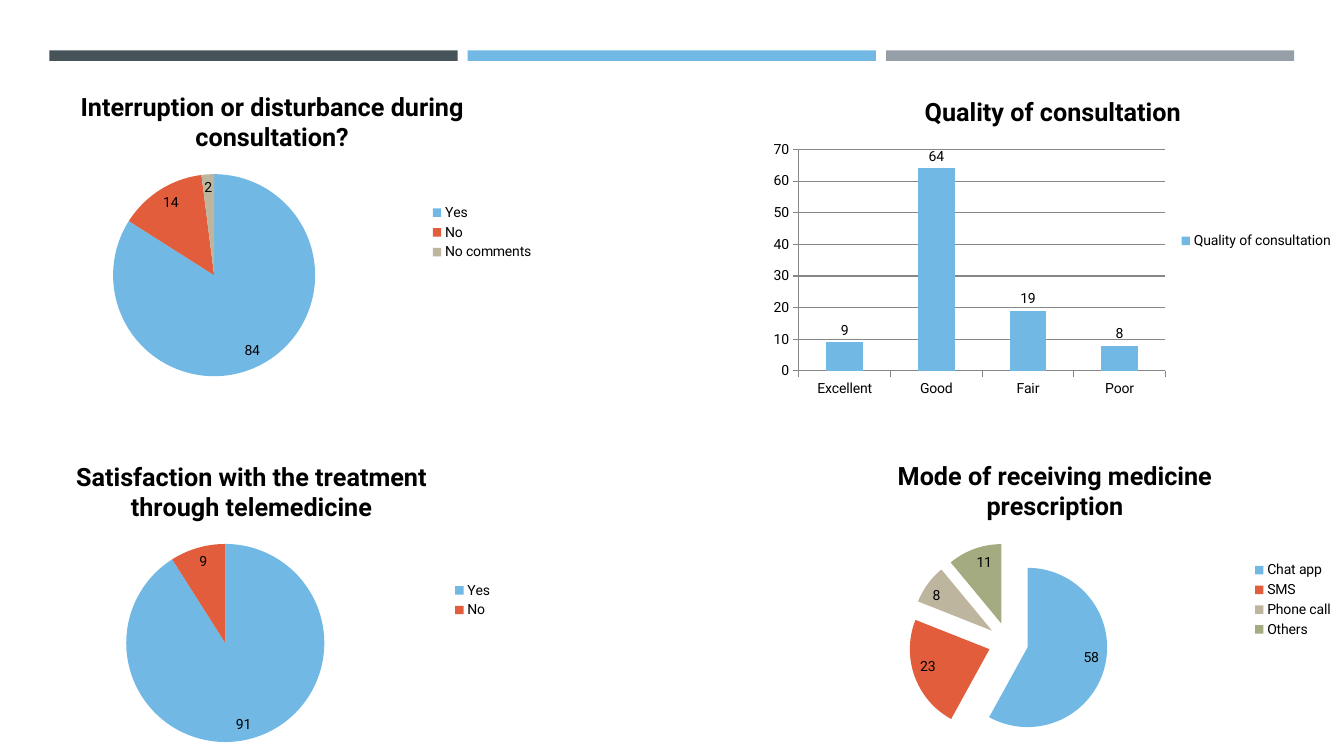
import pptx
import pptx.chart.data
import pptx.dml.color
import pptx.enum.chart
import pptx.enum.shapes
import pptx.util
from lxml import etree

Pt = pptx.util.Pt
Kind = pptx.enum.chart.XL_CHART_TYPE
LabelPosition = pptx.enum.chart.XL_LABEL_POSITION

FONT = "Roboto"
COLOURS = {
    "slate": "465359", "blue": "71B9E4", "grey": "969FA7",
    "red": "E25D3C", "sand": "BDB59D", "green": "A5AB81",
    "text": "000000", "axis": "868686",
}
SLICE_COLOURS = ["blue", "red", "sand", "green"]
BAR_COLOURS = ["slate", "blue", "grey"]
BAR_LEFT, BAR_TOP, BAR_WIDTH, BAR_HEIGHT, BAR_STEP = 35.3, 36, 291.6, 7.5, 298.8

# Boxes are left, top, width, height in points.
CHARTS = [
    {"title": "Interruption or disturbance during consultation?",
     "kind": Kind.PIE, "box": (0, 53.3, 388.8, 225.4),
     "values": {"Yes": 84, "No": 14, "No comments": 2}},
    {"title": "Quality of consultation",
     "kind": Kind.COLUMN_CLUSTERED, "box": (544.3, 56.2, 415.4, 231.8),
     "values": {"Excellent": 9, "Good": 64, "Fair": 19, "Poor": 8}},
    {"title": "Satisfaction with the treatment through telemedicine",
     "series": "Series 1",
     "kind": Kind.PIE, "box": (0, 317.5, 359.3, 222.5),
     "values": {"Yes": 91, "No": 9}},
    {"title": "Mode of receiving medicine prescription",
     "kind": Kind.PIE, "box": (547.2, 316.8, 412.6, 223.2), "explosion": 25,
     "values": {"Chat app": 58, "SMS": 23, "Phone call": 8, "Others": 11}},
]


def rgb(name):
    return pptx.dml.color.RGBColor.from_string(COLOURS[name])


def paint(fill, name):
    fill.solid()
    fill.fore_color.rgb = rgb(name)


def style_font(font, size, bold=False):
    font.name = FONT
    font.size = Pt(size)
    font.bold = bold
    font.color.rgb = rgb("text")


def write_title(chart, text, size=18, bold=True):
    chart.has_title = True
    para = chart.chart_title.text_frame.paragraphs[0]
    span = para.add_run()
    span.text = text
    style_font(span.font, size, bold)
    chart.chart_title.include_in_layout = False


def explode_slices(series, percent):
    """Pull every slice out from the centre by a percentage of the radius."""
    first_point = series.points[0].format and series._element.find("{*}dPt")
    explosion = etree.Element(
        etree.QName(etree.QName(first_point).namespace, "explosion"), val=str(percent))
    first_point.addprevious(explosion)


def style_axes(chart):
    for axis in (chart.category_axis, chart.value_axis):
        axis.major_tick_mark = pptx.enum.chart.XL_TICK_MARK.OUTSIDE
        axis.format.line.color.rgb = rgb("axis")
        axis.format.line.width = Pt(0.75)
    scale = chart.value_axis
    scale.minimum_scale, scale.maximum_scale, scale.major_unit = 0, 70, 10
    scale.has_major_gridlines = True
    scale.major_gridlines.format.line.color.rgb = rgb("axis")
    scale.major_gridlines.format.line.width = Pt(0.75)


def add_survey_chart(page, survey):
    data = pptx.chart.data.CategoryChartData()
    data.categories = list(survey["values"])
    data.add_series(survey.get("series", survey["title"]), survey["values"].values())
    frame = page.shapes.add_chart(survey["kind"], *map(Pt, survey["box"]), data)
    chart = frame.chart
    style_font(chart.font, 10)
    write_title(chart, survey["title"])

    chart.has_legend = True
    chart.legend.position = pptx.enum.chart.XL_LEGEND_POSITION.RIGHT
    chart.legend.include_in_layout = False

    plot = chart.plots[0]
    series = plot.series[0]
    is_pie = survey["kind"] == Kind.PIE
    plot.vary_by_categories = is_pie
    if is_pie:
        for index, name in enumerate(SLICE_COLOURS[:len(survey["values"])]):
            paint(series.points[index].format.fill, name)
    else:
        paint(series.format.fill, "blue")
        plot.gap_width = 150
        style_axes(chart)
    if "explosion" in survey:
        explode_slices(series, survey["explosion"])

    labels = series.data_labels
    labels.show_value = True
    labels.position = LabelPosition.INSIDE_END if is_pie else LabelPosition.OUTSIDE_END
    style_font(labels.font, 10)


def main():
    deck = pptx.Presentation()
    deck.slide_width, deck.slide_height = Pt(960), Pt(540)
    page = deck.slides.add_slide(deck.slide_layouts[6])
    for index, name in enumerate(BAR_COLOURS):
        bar = page.shapes.add_shape(
            pptx.enum.shapes.MSO_SHAPE.RECTANGLE, Pt(BAR_LEFT + index * BAR_STEP),
            Pt(BAR_TOP), Pt(BAR_WIDTH), Pt(BAR_HEIGHT))
        bar.shadow.inherit = False
        bar.line.fill.background()
        paint(bar.fill, name)
    for survey in CHARTS:
        add_survey_chart(page, survey)
    deck.save("out.pptx")


if __name__ == "__main__":
    main()
